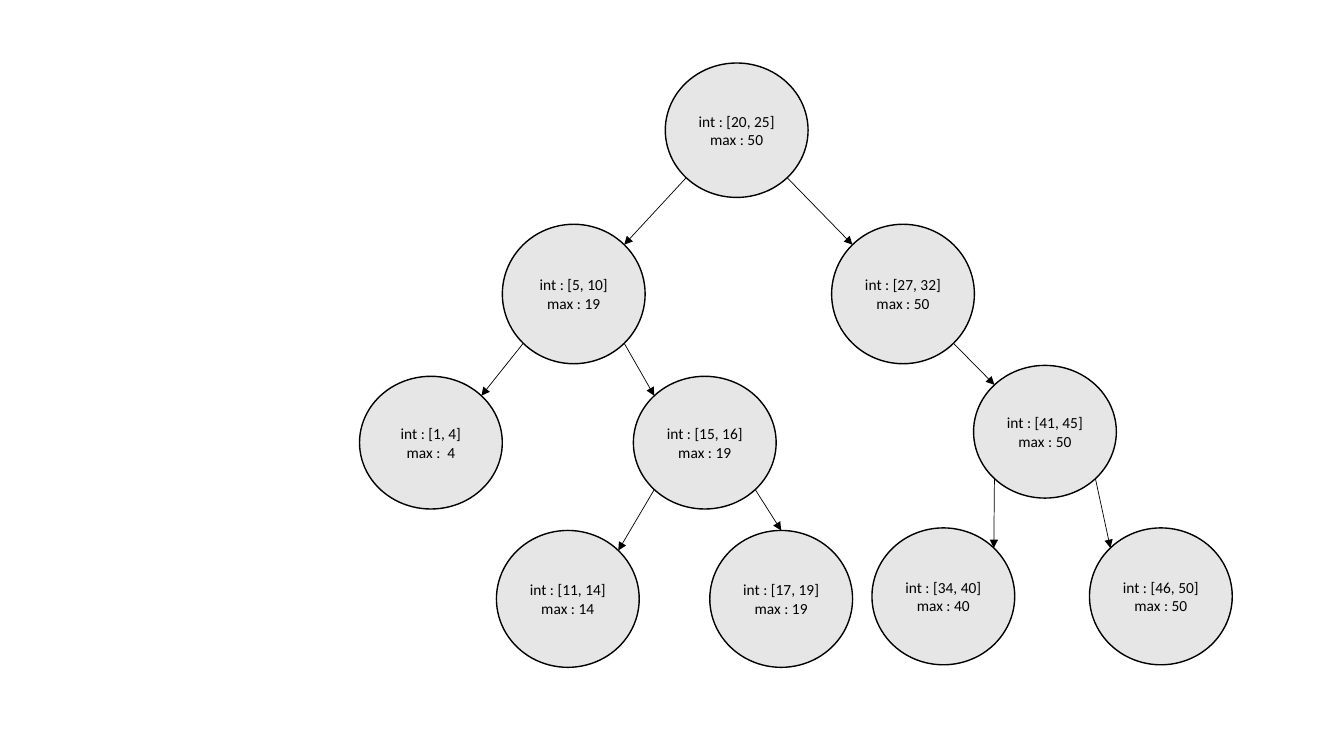
import math

import pptx
import pptx.dml.color
import pptx.enum.shapes
import pptx.enum.text
import pptx.oxml
import pptx.oxml.ns
import pptx.util

COLORS = {"node": "E7E6E6", "ink": "000000"}
COLS, ROWS = 16, 9
WIDE = 1.7
DIAG = math.sqrt(0.5)

NODES = {
    "root": (8.77, 1.55, 1.6, "[20, 25]", "50"),
    "low": (6.83, 3.5, 1.66, "[5, 10]", "19"),
    "high": (10.75, 3.5, 1.66, "[27, 32]", "50"),
    "first": (5.13, 5.27, 1.58, "[1, 4]", " 4"),
    "mid": (8.39, 5.27, 1.58, "[15, 16]", "19"),
    "upper": (12.44, 5.14, 1.58, "[41, 45]", "50"),
    "teens": (6.76, 7.13, 1.63, "[11, 14]", "14"),
    "late": (9.3, 7.13, 1.63, "[17, 19]", "19"),
    "thirty": (11.23, 7.1, 1.63, "[34, 40]", "40"),
    "last": (13.82, 7.1, 1.63, "[46, 50]", "50"),
}

LEFT, RIGHT = -1, 1
EDGES = [
    ("root", "low", LEFT),
    ("root", "high", RIGHT),
    ("low", "first", LEFT),
    ("low", "mid", RIGHT),
    ("high", "upper", RIGHT),
    ("mid", "teens", LEFT),
    ("upper", "thirty", LEFT),
    ("upper", "last", RIGHT),
]


class Tree:
    def __init__(self, deck):
        self.shapes = deck.slides.add_slide(deck.slide_layouts[6]).shapes
        self.col = deck.slide_width / COLS
        self.row = deck.slide_height / ROWS
        self.font = "Calibri"
        self.size = pptx.util.Pt(11)
        self.nodes = {}

    def color(self, name):
        return pptx.dml.color.RGBColor.from_string(COLORS[name])

    def place(self, x, y):
        return round(x * self.col), round(y * self.row)

    def label(self, para, text):
        para.alignment = pptx.enum.text.PP_ALIGN.CENTER
        run = para.add_run()
        run.text = text
        run.font.name = self.font
        run.font.size = self.size
        run.font.color.rgb = self.color("ink")

    def node(self, name, x, y, tall, span, peak):
        oval = self.shapes.add_shape(
            pptx.enum.shapes.MSO_SHAPE.OVAL,
            *self.place(x - WIDE / 2, y - tall / 2),
            *self.place(WIDE, tall),
        )
        oval.shadow.inherit = False
        oval.fill.solid()
        oval.fill.fore_color.rgb = self.color("node")
        oval.line.color.rgb = self.color("ink")
        oval.line.width = pptx.util.Pt(1)
        frame = oval.text_frame
        frame.word_wrap = True
        frame.vertical_anchor = pptx.enum.text.MSO_ANCHOR.MIDDLE
        self.label(frame.paragraphs[0], f"int : {span}")
        self.label(frame.add_paragraph(), f"max : {peak}")
        self.nodes[name] = oval

    def rim(self, name, side, down):
        oval = self.nodes[name]
        x = oval.left + oval.width / 2 * (1 + side * DIAG)
        y = oval.top + oval.height / 2 * (1 + down * DIAG)
        return round(x), round(y)

    def edge(self, start, end, side, top=False):
        line = self.shapes.add_connector(
            pptx.enum.shapes.MSO_CONNECTOR.STRAIGHT,
            *self.rim(start, side, 1),
            *self.rim(end, -side, -1),
        )
        if top:
            line.end_connect(self.nodes[end], 0)
        line.line.color.rgb = self.color("ink")
        line.line.width = pptx.util.Pt(0.5)
        space = pptx.oxml.ns.nsdecls("a")
        props = line._element.spPr
        props.get_or_add_ln().append(
            pptx.oxml.parse_xml(f'<a:tailEnd {space} type="triangle"/>')
        )
        props.append(pptx.oxml.parse_xml(f"<a:effectLst {space}/>"))


def main():
    deck = pptx.Presentation()
    deck.slide_width = pptx.util.Inches(13.33)
    deck.slide_height = pptx.util.Inches(7.5)
    tree = Tree(deck)
    for name, data in NODES.items():
        tree.node(name, *data)
    for start, end, side in EDGES:
        tree.edge(start, end, side)
    tree.edge("mid", "late", RIGHT, top=True)
    deck.save("out.pptx")


if __name__ == "__main__":
    main()
